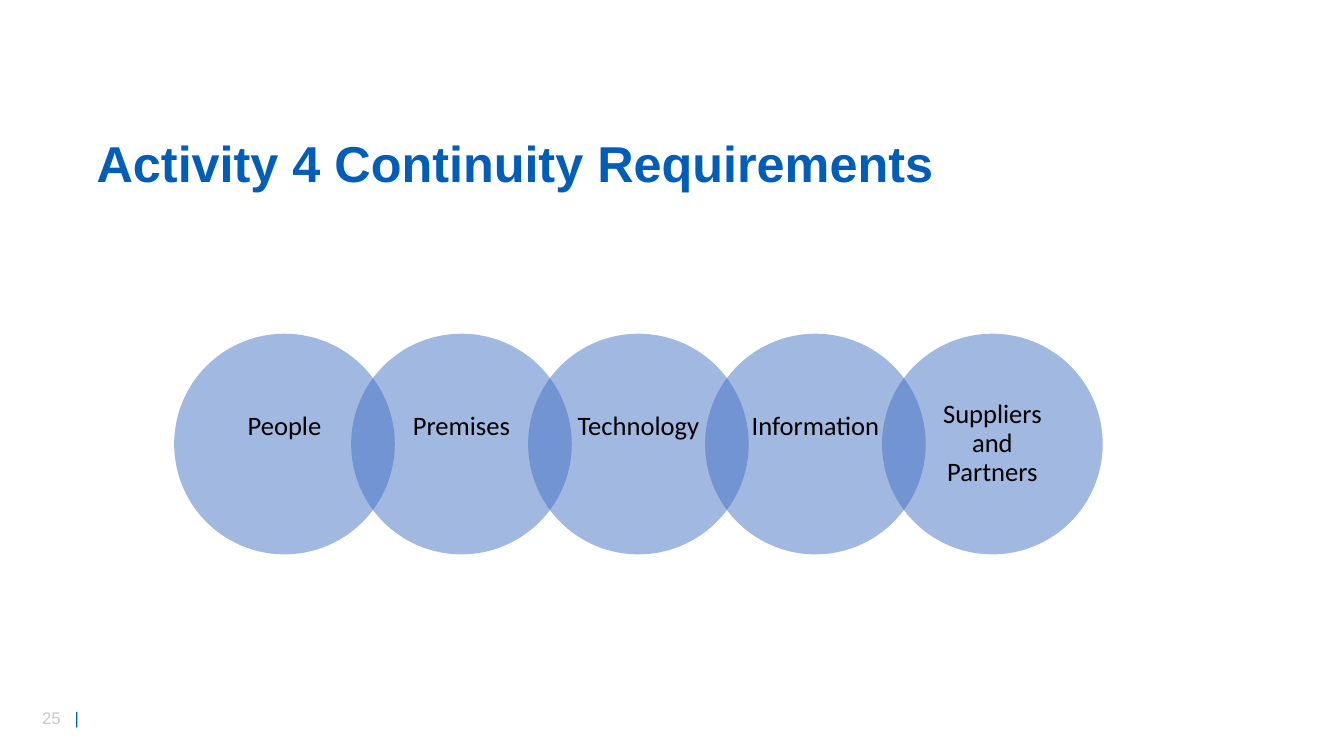
from dataclasses import dataclass

from lxml import etree
from pptx import Presentation
from pptx.dml.color import RGBColor
from pptx.enum.shapes import MSO_SHAPE
from pptx.enum.text import MSO_ANCHOR, MSO_AUTO_SIZE, PP_ALIGN
from pptx.oxml.ns import qn
from pptx.slide import Slide
from pptx.util import Cm, Pt

OVAL = MSO_SHAPE.OVAL
MIDDLE = MSO_ANCHOR.MIDDLE
NO_AUTOFIT = MSO_AUTO_SIZE.NONE
LEFT, CENTER = PP_ALIGN.LEFT, PP_ALIGN.CENTER

COLORS = {"heading": "005EB8", "circle": "4472C4", "label": "000000", "number": "C9C9C9"}

# Chain geometry in centimetres
CHAIN_LEFT, CHAIN_TOP = 4.39, 8.41
DIAMETER, PITCH = 5.56, 4.46
LABEL_SIZE = 3.94
LABEL_OFFSET = (DIAMETER - LABEL_SIZE) / 2


@dataclass
class Requirement:
    label: str
    bottom_inset: float = 0.94  # lifts the label above the circle's centre


REQUIREMENTS = [
    Requirement("People"),
    Requirement("Premises"),
    Requirement("Technology"),
    Requirement("Information"),
    Requirement("Suppliers and Partners", bottom_inset=0.08),
]


def color(name: str) -> RGBColor:
    return RGBColor.from_string(COLORS[name])


def add_heading(slide: Slide, text: str) -> None:
    heading = slide.shapes.title
    heading.left, heading.top = Cm(2.18), Cm(3.35)
    heading.width, heading.height = Cm(29.57), Cm(1.7)
    frame = heading.text_frame
    frame.text = text
    frame.auto_size = NO_AUTOFIT
    frame.vertical_anchor = MIDDLE
    paragraph = frame.paragraphs[0]
    paragraph.alignment = LEFT
    paragraph.line_spacing = 0.9
    font = paragraph.runs[0].font
    font.name, font.size, font.bold = "Arial", Pt(36), True
    font.color.rgb = color("heading")


def add_circle(slide: Slide, left: float) -> None:
    circle = slide.shapes.add_shape(OVAL, Cm(left), Cm(CHAIN_TOP), Cm(DIAMETER), Cm(DIAMETER))
    circle.shadow.inherit = False
    circle.fill.solid()
    circle.fill.fore_color.rgb = color("circle")
    circle.line.fill.background()
    # Half transparent, so that the overlaps show darker
    shade = circle.fill._xPr.find(qn("a:solidFill"))[0]
    etree.SubElement(shade, qn("a:alpha"), val="50000")


def add_label(slide: Slide, left: float, requirement: Requirement) -> None:
    label = slide.shapes.add_textbox(
        Cm(left + LABEL_OFFSET), Cm(CHAIN_TOP + LABEL_OFFSET), Cm(LABEL_SIZE), Cm(LABEL_SIZE)
    )
    frame = label.text_frame
    frame.word_wrap = True
    frame.vertical_anchor = MIDDLE
    frame.margin_left = frame.margin_right = Cm(0.3)
    frame.margin_top = Cm(0.08)
    frame.margin_bottom = Cm(requirement.bottom_inset)
    frame.text = requirement.label
    paragraph = frame.paragraphs[0]
    paragraph.alignment = CENTER
    paragraph.line_spacing = 0.9
    font = paragraph.runs[0].font
    font.name, font.size = "Calibri", Pt(19)
    font.color.rgb = color("label")


def add_page_number(slide: Slide, number: int) -> None:
    footer = slide.shapes.add_textbox(Cm(0.81), Cm(17.7), Cm(1.8), Cm(0.76))
    paragraph = footer.text_frame.paragraphs[0]
    # A tab stop sets the bar apart from the number
    tabs = etree.SubElement(paragraph._p.get_or_add_pPr(), qn("a:tabLst"))
    etree.SubElement(tabs, qn("a:tab"), pos=str(Cm(0.82)), algn="l")
    for text, shade in ((f"{number}\t", "number"), ("|", "heading")):
        run = paragraph.add_run()
        run.text = text
        run.font.name, run.font.size = "Arial", Pt(12)
        run.font.color.rgb = color(shade)


def main() -> None:
    prs = Presentation()
    prs.slide_width, prs.slide_height = Cm(33.87), Cm(19.05)
    slide = prs.slides.add_slide(prs.slide_layouts[5])

    add_page_number(slide, 25)
    add_heading(slide, "Activity 4 Continuity Requirements")

    # Chain of overlapping circles
    for index, requirement in enumerate(REQUIREMENTS):
        left = CHAIN_LEFT + index * PITCH
        add_circle(slide, left)
        add_label(slide, left, requirement)

    prs.save("out.pptx")


if __name__ == "__main__":
    main()
